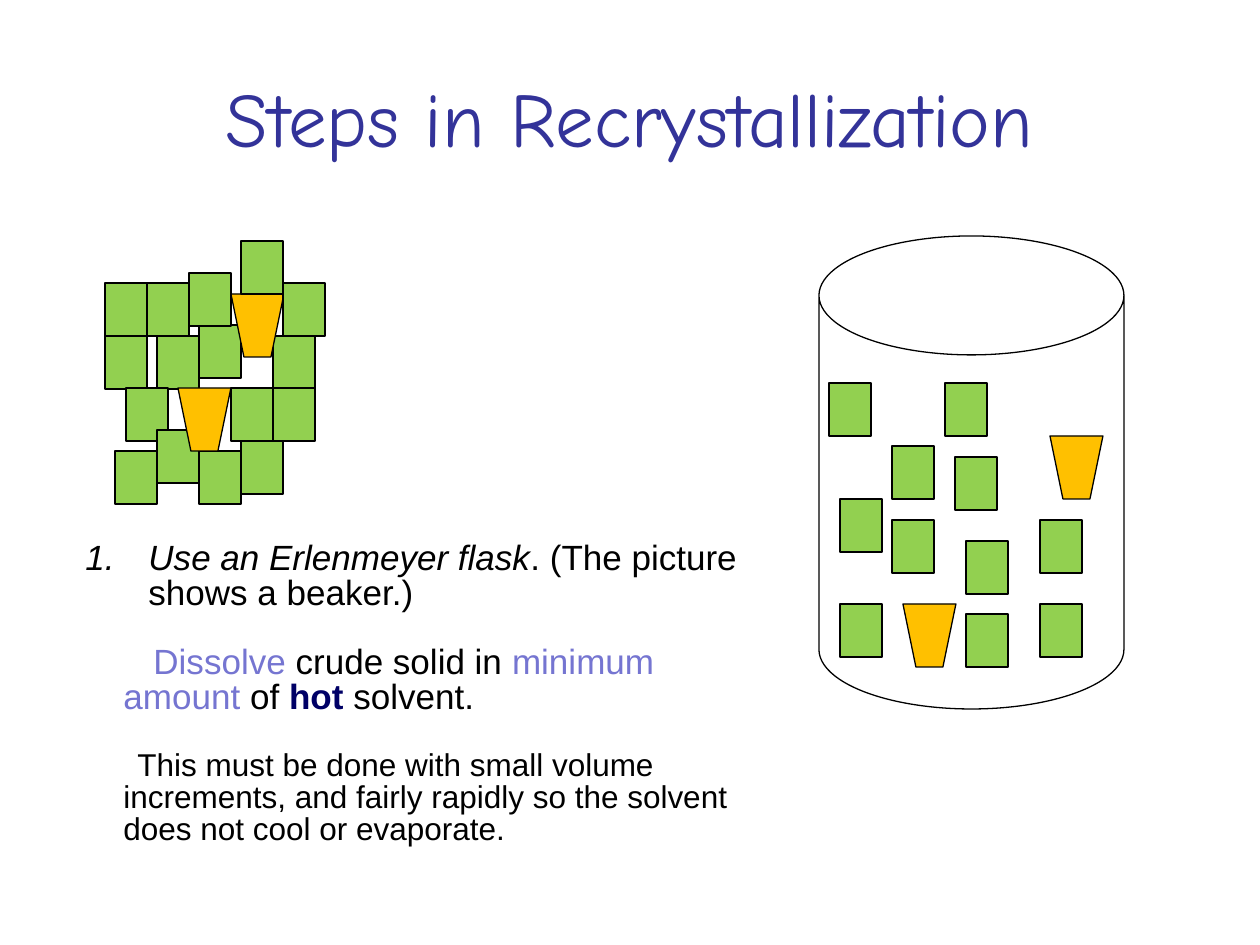
from lxml import etree
from pptx import Presentation
from pptx import util as u
from pptx.dml.color import RGBColor
from pptx.enum import shapes, text
from pptx.oxml.ns import qn

PX = 914400 / 126
COLORS = {"title": "333399", "green": "92D050", "amber": "FFC000", "black": "000000",
          "accent": "7575D1", "navy": "000066"}


def px(n):
    return u.Emu(round(n * PX))


def add_crystal(parent, kind, x, y):
    """Green squares are product, amber trapezoids are impurity."""
    if kind == "green":
        sp = parent.add_shape(shapes.MSO_SHAPE.RECTANGLE, px(x), px(y), px(42), px(53))
    else:
        fb = parent.build_freeform(x, y, scale=PX)
        fb.add_line_segments([(x + 13, y + 63), (x + 40, y + 63), (x + 53, y)])
        sp = fb.convert_to_shape()
    sp.shadow.inherit = False
    sp.fill.solid()
    sp.fill.fore_color.rgb = RGBColor.from_string(COLORS[kind])
    sp.line.color.rgb = RGBColor.from_string(COLORS["black"])
    sp.line.width = u.Pt(0.75)


prs = Presentation()
prs.slide_width, prs.slide_height = u.Inches(10), u.Inches(7.5)
s = prs.slides.add_slide(prs.slide_layouts[6])

# Title
tf = s.shapes.add_textbox(px(63), px(38), px(1134), px(157)).text_frame
tf.word_wrap = True
tf.vertical_anchor = text.MSO_ANCHOR.MIDDLE
p = tf.paragraphs[0]
p.alignment = text.PP_ALIGN.CENTER
r = p.add_run()
r.text = "Steps in Recrystallization"
r.font.name, r.font.size = "Comic Neue", u.Pt(44)
r.font.color.rgb = RGBColor.from_string(COLORS["title"])

# Crude solid: one group of packed crystals, back to front
crude = [
    ("green", [(105, 336), (157, 336), (199, 325), (273, 336), (126, 388), (231, 388),
               (273, 388), (115, 451), (157, 430), (199, 451), (241, 441)]),
    ("amber", [(178, 388), (231, 294)]),
    ("green", [(283, 283), (189, 273), (147, 283), (105, 283), (241, 241)]),
]
group = s.shapes.add_group_shape()
for kind, spots in crude:
    for x, y in spots:
        add_crystal(group.shapes, kind, x, y)

# Beaker
can = s.shapes.add_shape(shapes.MSO_SHAPE.CAN, px(819), px(236), px(305), px(473))
can.adjustments[0] = 0.39
can.shadow.inherit = False
can.fill.background()
can.line.color.rgb = RGBColor.from_string(COLORS["black"])
can.line.width = u.Pt(0.75)

# Crystals dispersed in the beaker
dispersed = [
    ("green", [(966, 541), (966, 614), (829, 383), (945, 383), (1040, 604), (840, 604)]),
    ("amber", [(1050, 436), (903, 604)]),
    ("green", [(892, 446), (1040, 520), (955, 457), (840, 499), (892, 520)]),
]
for kind, spots in dispersed:
    for x, y in spots:
        add_crystal(s.shapes, kind, x, y)

# Instructions: (size, space before, left margin, first-line indent, runs)
steps = [
    (20, 0, 63, -63, [("Use an Erlenmeyer flask", "black", "i"),
                      (". (The picture shows a beaker.)", "black", "")]),
    (20, 19, 38, 30, [("Dissolve", "accent", ""), (" crude solid in ", "black", ""),
                      ("minimum amount", "accent", ""), (" of ", "black", ""),
                      ("hot ", "navy", "b"), ("solvent.", "black", "")]),
    (18, 20, 38, 14, [("This must be done with small volume increments, and fairly rapidly "
                       "so the solvent does not cool or evaporate.", "black", "")]),
]
tf = s.shapes.add_textbox(px(73), px(536), px(735), px(369)).text_frame
tf.word_wrap = True
tf.margin_right = px(48)
for i, (size, before, margin, indent, runs) in enumerate(steps):
    p = tf.paragraphs[0] if i == 0 else tf.add_paragraph()
    p.line_spacing = 0.84
    p.space_before = u.Pt(before)
    pPr = p._p.get_or_add_pPr()
    pPr.set("marL", str(px(margin)))
    pPr.set("indent", str(px(indent)))
    if indent < 0:
        etree.SubElement(pPr, qn("a:buFont"), typeface="+mj-lt")
        etree.SubElement(pPr, qn("a:buAutoNum"), type="arabicPeriod")
    for words, color, style in runs:
        r = p.add_run()
        r.text = words
        r.font.name, r.font.size = "Arial", u.Pt(size)
        r.font.italic, r.font.bold = style == "i", style == "b"
        r.font.color.rgb = RGBColor.from_string(COLORS[color])

prs.save("out.pptx")
